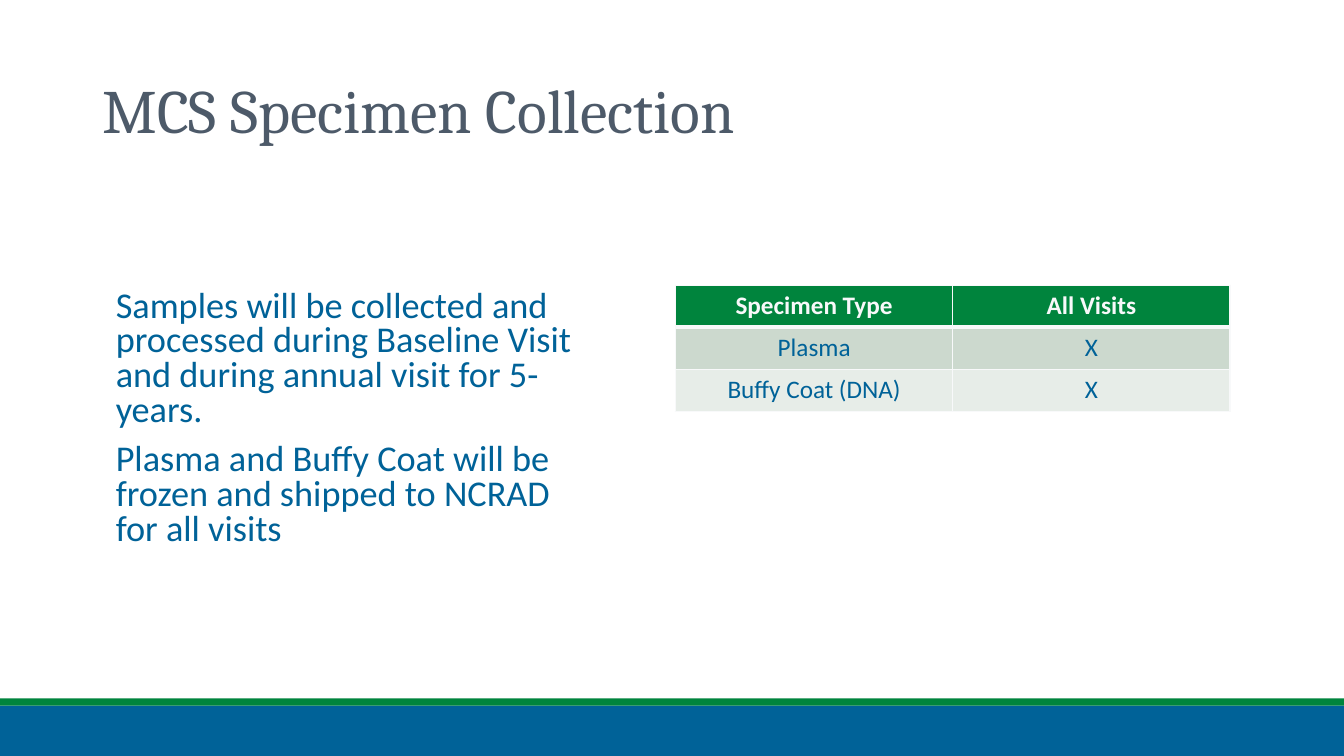
from lxml import etree
from pptx import Presentation
from pptx.dml.color import RGBColor
from pptx.enum.shapes import MSO_SHAPE
from pptx.enum.text import MSO_ANCHOR, PP_ALIGN
from pptx.oxml.ns import qn
from pptx.util import Inches, Pt

RECTANGLE = MSO_SHAPE.RECTANGLE
MIDDLE = MSO_ANCHOR.MIDDLE
TOP = MSO_ANCHOR.TOP
CENTER = PP_ALIGN.CENTER
LEFT = PP_ALIGN.LEFT

BLUE, GREEN, SLATE, PALE = "006298", "00843D", "4D5A69", "F8F9FA"
BAND_FILLS = ["CCD9CE", "E7EDE8"]
SLIDE_WIDTH, SLIDE_HEIGHT = 13.33, 7.5

BODY_TEXTS = [
    "Samples will be collected and processed during Baseline Visit and during annual visit for 5-years.",
    "Plasma and Buffy Coat will be frozen and shipped to NCRAD for all visits",
]
SPECIMEN_ROWS = [
    ("Specimen Type", "All Visits"),
    ("Plasma", "X"),
    ("Buffy Coat (DNA)", "X"),
]


def color(value):
    """Return the colour for a hex string."""
    return RGBColor.from_string(value)


def format_paragraph(paragraph, font_name, size, font_color, alignment=LEFT, bold=False):
    """Set the alignment and the font of a paragraph's runs."""
    paragraph.alignment = alignment
    for run in paragraph.runs:
        run.font.name = font_name
        run.font.size = Pt(size)
        run.font.bold = bold
        run.font.color.rgb = color(font_color)


def add_bar(slide, left, top, width, height, fill):
    """Add a plain filled bar."""
    shape = slide.shapes.add_shape(
        RECTANGLE, Inches(left), Inches(top), Inches(width), Inches(height))
    shape.shadow.inherit = False
    shape.fill.solid()
    shape.fill.fore_color.rgb = color(fill)
    shape.line.fill.background()


def add_footer(slide, left, top, width, height):
    """Add the blue footer with its green stripe on top."""
    stripe = 0.07
    add_bar(slide, left, top + stripe, width, height - stripe, BLUE)
    add_bar(slide, left, top, width, stripe, GREEN)


def add_text_frame(slide, left, top, width, height, anchor):
    """Add a wrapping text box and return its text frame."""
    text_box = slide.shapes.add_textbox(
        Inches(left), Inches(top), Inches(width), Inches(height))
    text_frame = text_box.text_frame
    text_frame.word_wrap = True
    text_frame.vertical_anchor = anchor
    return text_frame


def add_title(slide, left, top, width, height):
    """Add the slide title."""
    text_frame = add_text_frame(slide, left, top, width, height, MIDDLE)
    text_frame.text = "MCS Specimen Collection"
    paragraph = text_frame.paragraphs[0]
    paragraph.line_spacing = 0.9
    format_paragraph(paragraph, "Cambria", 44, SLATE)


def add_body(slide, left, top, width, height):
    """Add the paragraphs on sample collection."""
    text_frame = add_text_frame(slide, left, top, width, height, TOP)
    text_frame.text = "\n".join(BODY_TEXTS)
    for index, paragraph in enumerate(text_frame.paragraphs):
        paragraph.line_spacing = 0.8
        paragraph.space_before = Pt(10 if index else 0)
        format_paragraph(paragraph, "Calibri", 25.9, BLUE)


def set_borders(cell, bottom_width):
    """Give a cell pale borders, with its own width at the bottom."""
    properties = cell._tc.get_or_add_tcPr()
    widths = {"a:lnL": 1, "a:lnR": 1, "a:lnT": 1, "a:lnB": bottom_width}
    for position, (tag, width) in enumerate(widths.items()):
        line = etree.Element(qn(tag), w=str(Pt(width)))
        fill = etree.SubElement(line, qn("a:solidFill"))
        etree.SubElement(fill, qn("a:srgbClr"), val=PALE)
        properties.insert(position, line)


def add_specimen_table(slide, left, top, width, height):
    """Add the table of specimens and visits."""
    row_count, column_count = len(SPECIMEN_ROWS), len(SPECIMEN_ROWS[0])
    table = slide.shapes.add_table(
        row_count, column_count,
        Inches(left), Inches(top), Inches(width), Inches(height)).table
    for row_index, texts in enumerate(SPECIMEN_ROWS):
        header = row_index == 0
        fill = GREEN if header else BAND_FILLS[(row_index - 1) % 2]
        for column_index, text in enumerate(texts):
            cell = table.cell(row_index, column_index)
            cell.text_frame.text = text
            format_paragraph(cell.text_frame.paragraphs[0], "Calibri", 18,
                             PALE if header else BLUE, CENTER, header)
            cell.fill.solid()
            cell.fill.fore_color.rgb = color(fill)
            set_borders(cell, 3 if header else 1)
            if row_index == 1:
                top_line = cell._tc.tcPr.find(qn("a:lnT"))
                top_line.set("w", str(Pt(3)))


def main():
    """Build the slide and save it."""
    presentation = Presentation()
    presentation.slide_width = Inches(SLIDE_WIDTH)
    presentation.slide_height = Inches(SLIDE_HEIGHT)
    slide = presentation.slides.add_slide(presentation.slide_layouts[6])
    add_footer(slide, 0, 6.93, SLIDE_WIDTH, 0.57)
    add_title(slide, 0.92, 0.4, 11.5, 1.45)
    add_body(slide, 1.05, 2.83, 4.83, 2.7)
    add_specimen_table(slide, 6.7, 2.83, 5.5, 1.25)
    presentation.save("out.pptx")


if __name__ == "__main__":
    main()
